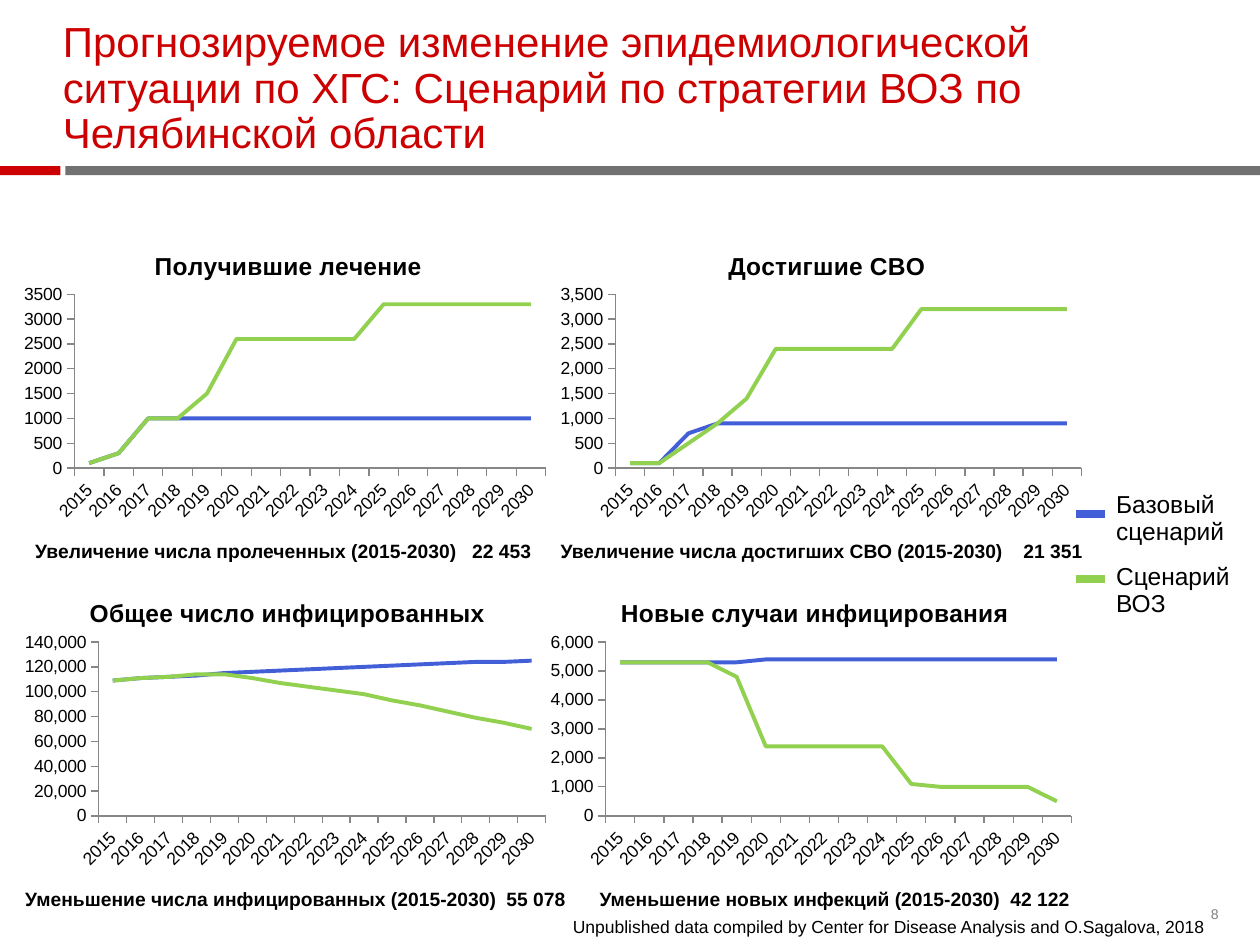
from lxml.etree import SubElement
from pptx import Presentation
from pptx.chart.data import CategoryChartData
from pptx.dml.color import RGBColor
from pptx.enum.chart import XL_CHART_TYPE as ChartType, XL_TICK_MARK as Tick
from pptx.enum.shapes import MSO_CONNECTOR as Connector, MSO_SHAPE as Shape
from pptx.enum.text import MSO_ANCHOR as Anchor
from pptx.oxml import parse_xml
from pptx.oxml.ns import nsdecls, qn
from pptx.util import Cm, Pt


class Theme:
    font = "Arial"
    red, gray, number, axis, black = "CC0000", "717171", "808080", "868686", "000000"
    series = ("425FD8", "92D050")
    title, legend, chart_title, caption, small, tiny = 24, 14, 14, 11, 10, 8


# Content
TITLE = ("Прогнозируемое изменение эпидемиологической ситуации по ХГС: "
         "Сценарий по стратегии ВОЗ по Челябинской области")
SOURCE = "Unpublished data compiled by Center for Disease Analysis and O.Sagalova, 2018"
SCENARIOS = ("Базовый сценарий", "Сценарий ВОЗ")
YEARS = [str(year) for year in range(2015, 2031)]

# plot: left and width as shares of the chart; caption: left, tab stop in cm
CHARTS = [
    dict(title="Получившие лечение", left=0.3, top=4.52, plot=(0.11, 0.87), title_x=0.25,
         fmt="0", max=3500, step=500, skip=1,
         values=([100, 300] + [1000] * 14,
                 [100, 300, 1000, 1000, 1500] + [2600] * 5 + [3300] * 6),
         caption=("Увеличение числа пролеченных (2015-2030)", "22 453", 0.71, 8.81)),
    dict(title="Достигшие СВО", left=11.1, top=4.52, plot=(0.12, 0.86), title_x=0.32,
         fmt="#,##0", max=3500, step=500, skip=1,
         values=([100, 100, 700] + [900] * 13,
                 [100, 100, 500, 900, 1400] + [2400] * 5 + [3200] * 6),
         caption=("Увеличение числа достигших СВО (2015-2030)", "21 351", 11.3, 9.33)),
    dict(title="Общее число инфицированных", left=0.3, top=11.53, plot=(0.155, 0.825),
         title_x=0.13, fmt="#,##0", max=140000, step=20000, skip=2,
         values=([109000, 111000, 112000, 113000, 115000, 116000, 117000, 118000,
                  119000, 120000, 121000, 122000, 123000, 124000, 124000, 125000],
                 [109000, 111000, 112000, 114000, 114000, 111000, 107000, 104000,
                  101000, 98000, 93000, 89000, 84000, 79000, 75000, 70000]),
         caption=("Уменьшение числа инфицированных (2015-2030)", "55 078", 0.51, 9.7)),
    dict(title="Новые случаи инфицирования", left=10.9, top=11.53, plot=(0.12, 0.86),
         title_x=0.14, fmt="#,##0", max=6000, step=1000, skip=1,
         values=([5300] * 5 + [5400] * 11,
                 [5300] * 4 + [4800] + [2400] * 5 + [1100] + [1000] * 4 + [500]),
         caption=("Уменьшение новых инфекций (2015-2030)", "42 122", 12.09, 8.28)),
]
CHART_W, CHART_H = 10.92, 6.15
CAPTION_DROP = 6.4  # from chart top to caption top


def rgb(color):
    return RGBColor.from_string(color)


def style(font, size, color=Theme.black, bold=False):
    font.name, font.size, font.bold = Theme.font, Pt(size), bold
    font.color.rgb = rgb(color)


def add_text(shapes, text, box, size, color=Theme.black, bold=False,
             anchor=Anchor.TOP, spacing=0.9, tab=None):
    tf = shapes.add_textbox(*map(Cm, box)).text_frame
    tf.word_wrap, tf.vertical_anchor = True, anchor
    tf.margin_left = tf.margin_right = tf.margin_top = tf.margin_bottom = 0
    p = tf.paragraphs[0]
    p.text = text
    p.line_spacing = spacing
    if tab:
        tabs = SubElement(p._p.get_or_add_pPr(), qn("a:tabLst"))
        SubElement(tabs, qn("a:tab"), pos=str(Cm(tab)), algn="l")
    style(p.font, size, color, bold)


def layout_xml(x, y, w=None, h=None):
    inner = '<c:layoutTarget val="inner"/>' if w else ""
    size = f'<c:w val="{w}"/><c:h val="{h}"/>' if w else ""
    return parse_xml(
        f'<c:layout {nsdecls("c")}><c:manualLayout>{inner}<c:xMode val="edge"/>'
        f'<c:yMode val="edge"/><c:x val="{x}"/><c:y val="{y}"/>{size}'
        '</c:manualLayout></c:layout>')


def set_layout(element, layout, position):
    for old in element.findall(qn("c:layout")):
        element.remove(old)
    element.insert(position, layout)


def add_line_chart(shapes, item):
    data = CategoryChartData(number_format=item["fmt"])
    data.categories = YEARS
    for name, values in zip(SCENARIOS, item["values"]):
        data.add_series(name, values)
    box = (item["left"], item["top"], CHART_W, CHART_H)
    chart = shapes.add_chart(ChartType.LINE, *map(Cm, box), data).chart
    chart.has_legend = False
    style(chart.font, Theme.small)

    # Title and plot area
    p = chart.chart_title.text_frame.paragraphs[0]
    p.text = item["title"]
    style(p.font, Theme.chart_title, bold=True)
    chart.chart_title.include_in_layout = False
    set_layout(chart.chart_title._element, layout_xml(item["title_x"], 0.07), 1)
    x, w = item["plot"]
    plot_area = chart._chartSpace.chart.plotArea
    set_layout(plot_area, layout_xml(x, 0.23, w, 0.57), 0)

    # Axes
    cat, val = chart.category_axis, chart.value_axis
    for axis in (cat, val):
        axis.has_major_gridlines = False
        axis.major_tick_mark, axis.minor_tick_mark = Tick.OUTSIDE, Tick.NONE
        axis.format.line.color.rgb = rgb(Theme.axis)
        axis.format.line.width = Pt(0.75)
        style(axis.tick_labels.font, Theme.small)
    cat._element.txPr.bodyPr.set("rot", "-2700000")
    if item["skip"] > 1:
        skip = parse_xml(f'<c:tickLblSkip {nsdecls("c")} val="{item["skip"]}"/>')
        cat._element.find(qn("c:noMultiLvlLbl")).addprevious(skip)
    val.minimum_scale, val.maximum_scale, val.major_unit = 0, item["max"], item["step"]
    val.tick_labels.number_format = item["fmt"]
    val.tick_labels.number_format_is_linked = False

    # Lines
    chart.plots[0].vary_by_categories = False
    for series, color in zip(chart.plots[0].series, Theme.series):
        series.smooth = False
        series.format.line.color.rgb = rgb(color)
        series.format.line.width = Pt(2.25)


def main():
    prs = Presentation()
    prs.slide_width, prs.slide_height = Cm(25.4), Cm(19.05)
    shapes = prs.slides.add_slide(prs.slide_layouts[6]).shapes

    # Heading with its two-part rule
    for left, width, color in ((1.32, 24.08, Theme.gray), (0, 1.22, Theme.red)):
        sp = shapes.add_shape(Shape.RECTANGLE, Cm(left), Cm(3.35), Cm(width), Cm(0.18))
        sp.shadow.inherit = False
        sp.fill.solid()
        sp.fill.fore_color.rgb = rgb(color)
        sp.line.fill.background()
    add_text(shapes, TITLE, (1.27, 1.3, 22.86, 1.88), Theme.title, Theme.red,
             anchor=Anchor.BOTTOM)

    # Shared legend
    legend = shapes.add_group_shape().shapes
    for i, (name, color) in enumerate(zip(SCENARIOS, Theme.series)):
        y = Cm(10.36 + 1.32 * i)
        line = legend.add_connector(Connector.STRAIGHT, Cm(21.69), y, Cm(22.28), y)
        line.line.color.rgb = rgb(color)
        line.line.width = Pt(4.5)
        SubElement(line._element.spPr, qn("a:effectLst"))
        add_text(legend, name, (22.5, 9.93 + 1.45 * i, 2.36, 1.07), Theme.legend)

    # Charts with captions
    for item in CHARTS:
        add_line_chart(shapes, item)
        label, total, left, tab = item["caption"]
        add_text(shapes, f"{label}\t{total}", (left, item["top"] + CAPTION_DROP, tab + 1.5, 0.43),
                 Theme.caption, bold=True, tab=tab)

    # Source and slide number
    add_text(shapes, SOURCE, (11.55, 18.47, 13.4, 0.45), Theme.small, spacing=1)
    add_text(shapes, "8", (24.41, 18.29, 0.89, 0.69), Theme.tiny, Theme.number)

    prs.save("out.pptx")


if __name__ == "__main__":
    main()
